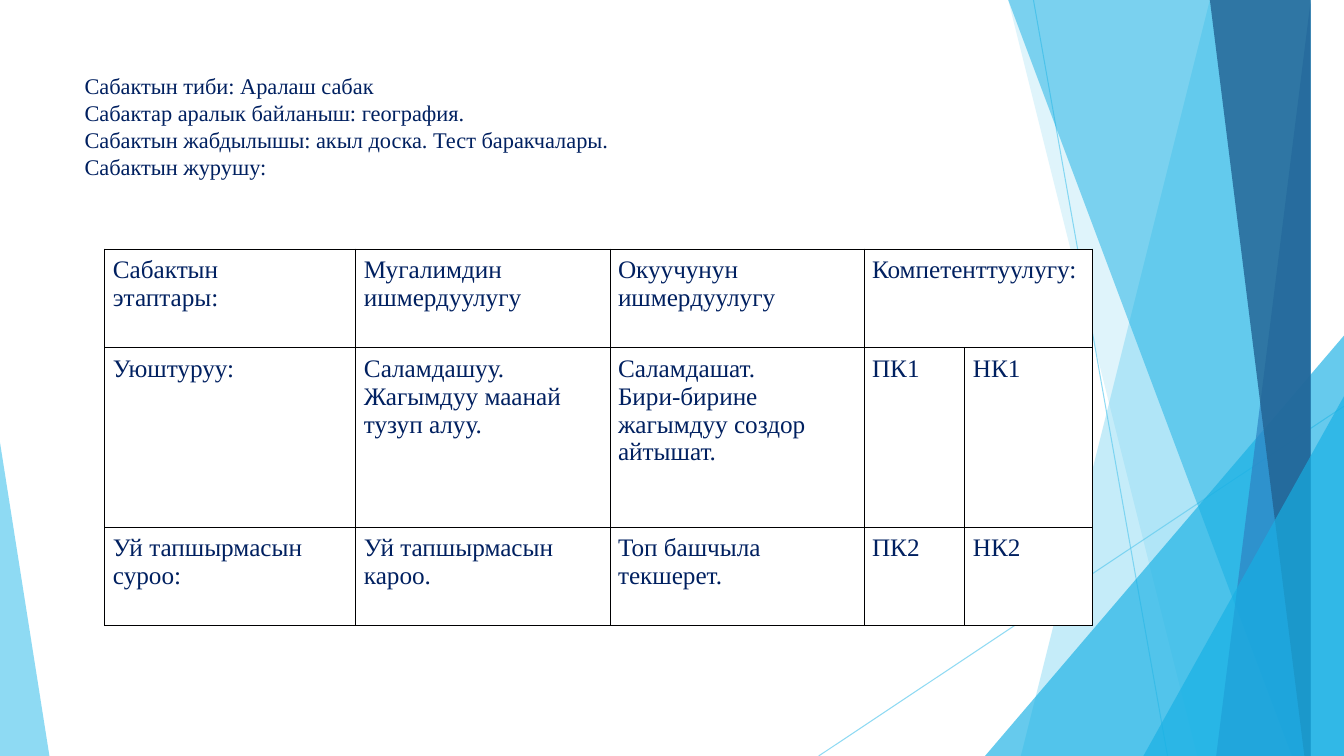
"""Build a lesson plan slide with a faceted blue border and a stage table."""
from pptx import Presentation, util as u
from pptx.dml.color import RGBColor
from pptx.enum import shapes, text
from pptx.oxml import parse_xml
from pptx.oxml.ns import nsdecls, qn
from lxml import etree

W, H = 13.33, 7.5
FONT = "Times New Roman"
HUES = {"sky": "5FCBEF", "cyan": "17B0E4", "blue": "2E83C3", "deep": "226292",
        "navy": "002060", "black": "000001", "white": "FFFFFF"}

INTRO = ["Сабактын тиби: Аралаш сабак",
         "Сабактар аралык байланыш: география.",
         "Сабактын жабдылышы: акыл доска. Тест баракчалары.",
         "Сабактын журушу:"]
ROWS = [
    ["Сабактын\nэтаптары:", "Мугалимдин ишмердуулугу",
     "Окуучунун ишмердуулугу", "Компетенттуулугу:", ""],
    ["Уюштуруу:", "Саламдашуу.\nЖагымдуу маанай тузуп алуу.",
     "Саламдашат.\nБири-бирине жагымдуу создор айтышат.", "ПК1", "НК1"],
    ["Уй тапшырмасын\nсуроо:", "Уй тапшырмасын кароо.",
     "Топ башчыла текшерет.", "ПК2", "НК2"],
]
WIDTHS = [2.49, 2.52, 2.52, 1, 1.27]
HEIGHTS = [0.98, 1.78, 0.98]

RAYS = [((10.25, 0), (11.58, H)), ((W, 4.03), (8.12, H))]
# Bands run to the right edge: top x, bottom x. Wedges: left, top, width, apex.
FACETS = [
    ("band", (12.28, 10.04), "sky", 36),
    ("band", (10.5, 11.83), "sky", 20),
    ("wedge", (9.77, 3.33, 3.56, 1), "cyan", 66),
    ("band", (10.21, 12.91), "cyan", 50),
    ("band", (13.03, 11.92), "blue", 70),
    ("band", (11.96, 13.18), "deep", 80),
    ("wedge", (11.34, 3.93, 1.99, 1), "cyan", 66),
    ("wedge", (0, 4.39, 0.49, 0), "sky", 70),
]


def rgb(hue):
    return RGBColor.from_string(HUES[hue])


def fade(fill, share):
    tint = fill._xPr.find(".//" + qn("a:srgbClr"))
    etree.SubElement(tint, qn("a:alpha"), val=str(share * 1000))


def ray(slide, start, end):
    line = slide.shapes.add_connector(shapes.MSO_CONNECTOR.STRAIGHT,
                                      *map(u.Inches, start + end))
    line.line.width = u.Pt(0.75)
    line.line.color.rgb = rgb("sky")
    fade(line.line.fill, 70)
    etree.SubElement(line._element.spPr, qn("a:effectLst"))


def facet(slide, kind, dims, hue, share):
    if kind == "band":
        top, base = dims
        pen = slide.shapes.build_freeform(top, 0, scale=u.Inches(1))
        pen.add_line_segments([(W, 0), (W, H), (base, H)], close=True)
        shape = pen.convert_to_shape()
    else:
        left, top, wide, apex = dims
        shape = slide.shapes.add_shape(
            shapes.MSO_SHAPE.ISOSCELES_TRIANGLE,
            *map(u.Inches, (left, top, wide, H - top)))
        shape.adjustments[0] = apex
    shape.shadow.inherit = False
    shape.line.fill.background()
    shape.fill.solid()
    shape.fill.fore_color.rgb = rgb(hue)
    fade(shape.fill, share)


def write(frame, lines, size):
    frame.word_wrap = True
    frame.text = "\n".join(lines)
    for para in frame.paragraphs:
        para.font.name = FONT
        para.font.size = u.Pt(size)
        para.font.color.rgb = rgb("navy")


def edge(cell):
    props = cell._tc.get_or_add_tcPr()
    for i, side in enumerate(("lnL", "lnR", "lnT", "lnB")):
        props.insert(i, parse_xml(
            f'<a:{side} {nsdecls("a")} w="{u.Pt(0.75)}"><a:solidFill>'
            f'<a:srgbClr val="{HUES["black"]}"/></a:solidFill></a:{side}>'))


def grid(slide):
    table = slide.shapes.add_table(
        len(ROWS), len(WIDTHS), u.Inches(1.04), u.Inches(2.47),
        u.Inches(sum(WIDTHS)), u.Inches(sum(HEIGHTS))).table
    table.first_row = table.horz_banding = False
    for col, wide in zip(table.columns, WIDTHS):
        col.width = u.Inches(wide)
    for row, high, words in zip(table.rows, HEIGHTS, ROWS):
        row.height = u.Inches(high)
        for cell, word in zip(row.cells, words):
            cell.margin_left = cell.margin_right = u.Inches(0.08)
            cell.margin_top = cell.margin_bottom = u.Inches(0.07)
            cell.fill.solid()
            cell.fill.fore_color.rgb = rgb("white")
            write(cell.text_frame, word.split("\n"), 18)
            edge(cell)
    table.cell(0, 3).merge(table.cell(0, 4))


def main():
    deck = Presentation()
    deck.slide_width, deck.slide_height = u.Inches(W), u.Inches(H)
    slide = deck.slides.add_slide(deck.slide_layouts[6])
    for start, end in RAYS:
        ray(slide, start, end)
    for item in FACETS:
        facet(slide, *item)
    intro = slide.shapes.add_textbox(
        *map(u.Inches, (0.74, 0.67, 9.4, 1.44))).text_frame
    intro.vertical_anchor = text.MSO_ANCHOR.TOP
    write(intro, INTRO, 16)
    grid(slide)
    deck.save("out.pptx")


if __name__ == "__main__":
    main()
